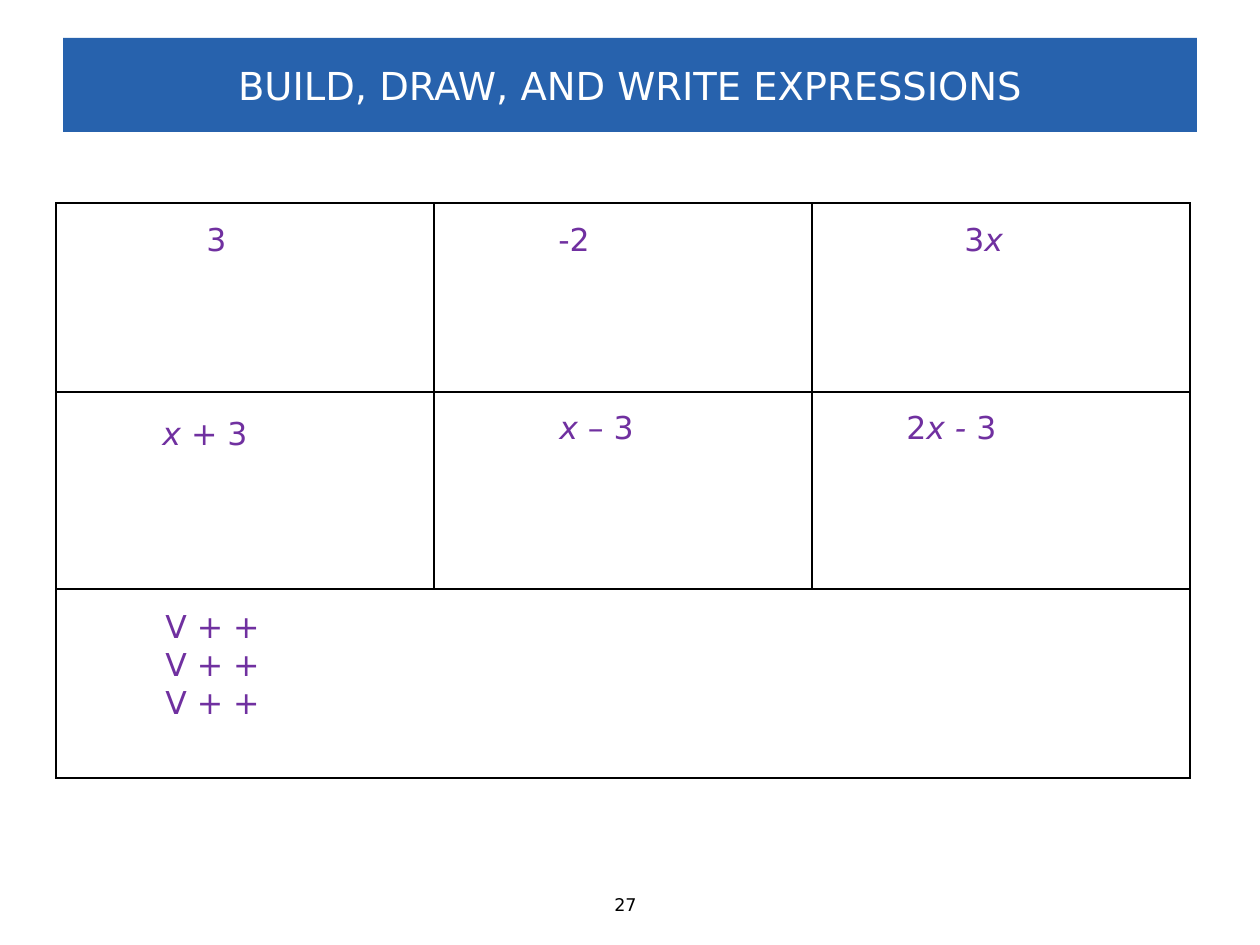
from dataclasses import dataclass

from lxml import etree
from pptx import Presentation
from pptx.dml import color
from pptx.enum import text
from pptx.oxml import ns
from pptx.util import Emu, Pt

PX = 914400 // 126  # one px in EMU


@dataclass(frozen=True)
class Theme:
    font: str = "DejaVu Sans"
    banner: str = "2762AD"
    on_banner: str = "FFFFFF"
    expression: str = "7030A0"
    ink: str = "000000"
    title_size: int = 22
    expression_size: int = 18
    number_size: int = 10
    border: int = 1


THEME = Theme()

# Left, top, width and indent in px, then lines of (wording, italic) runs
EXPRESSIONS = [
    (67, 214, 189, 127, [[("3", False)]]),
    (446, 214, 291, 100, [[("-2", False)]]),
    (825, 214, 291, 127, [[("3", False), ("x", True)]]),
    (150, 408, 146, 0, [[("x", True), (" + 3", False)]]),
    (447, 402, 329, 100, [[("x", True), (" – 3", False)]]),
    (824, 402, 291, 70, [[("2", False), ("x - ", True), ("3", False)]]),
    (26, 601, 291, 127, [[("V + +", False)]] * 3),
]


def px(*lengths):
    return [Emu(length * PX) for length in lengths]


def add_run(paragraph, wording, size, ink, italic=False):
    run = paragraph.add_run()
    run.text = wording
    formats = {"name": THEME.font, "size": Pt(size), "italic": italic}
    for name, value in formats.items():
        setattr(run.font, name, value)
    run.font.color.rgb = color.RGBColor.from_string(ink)


def set_frame(frame, **formats):
    for name, value in formats.items():
        setattr(frame, name, value)


def add_banner(slide):
    title = slide.shapes.title
    title.left, title.top, title.width, title.height = px(63, 38, 1134, 94)
    title.fill.solid()
    title.fill.fore_color.rgb = color.RGBColor.from_string(THEME.banner)
    set_frame(title.text_frame, word_wrap=True,
              auto_size=text.MSO_AUTO_SIZE.NONE,
              vertical_anchor=text.MSO_ANCHOR.MIDDLE)
    paragraph = title.text_frame.paragraphs[0]
    paragraph.alignment = text.PP_ALIGN.CENTER
    add_run(paragraph, "BUILD, DRAW, AND WRITE EXPRESSIONS",
            THEME.title_size, THEME.on_banner)


def set_borders(cell):
    properties = cell._tc.get_or_add_tcPr()
    for index, side in enumerate(("lnL", "lnR", "lnT", "lnB")):
        line = etree.Element(ns.qn(f"a:{side}"), w=str(Pt(THEME.border)))
        fill = etree.SubElement(line, ns.qn("a:solidFill"))
        etree.SubElement(fill, ns.qn("a:srgbClr"), val=THEME.ink)
        properties.insert(index, line)


def add_grid(slide, left, top, widths, heights):
    table = slide.shapes.add_table(
        len(heights), len(widths),
        *px(left, top, sum(widths), sum(heights))).table
    table.first_row = table.horz_banding = False
    for column, width in zip(table.columns, px(*widths)):
        column.width = width
    for row, height in zip(table.rows, px(*heights)):
        row.height = height
    for cell in table.iter_cells():
        cell.fill.background()
        set_borders(cell)
    # The last row is one wide cell
    last = len(heights) - 1
    table.cell(last, 0).merge(table.cell(last, len(widths) - 1))


def add_text(slide, left, top, width, height, lines, size, ink,
             indent=0, wrap=True):
    box = slide.shapes.add_textbox(*px(left, top, width, height))
    frame = box.text_frame
    set_frame(frame, word_wrap=wrap,
              auto_size=text.MSO_AUTO_SIZE.SHAPE_TO_FIT_TEXT)
    for index, runs in enumerate(lines):
        paragraph = frame.add_paragraph() if index else frame.paragraphs[0]
        paragraph._p.get_or_add_pPr().set("marL", str(indent * PX))
        for wording, italic in runs:
            add_run(paragraph, wording, size, ink, italic)


def main():
    presentation = Presentation()
    presentation.slide_width, presentation.slide_height = px(1260, 945)
    slide = presentation.slides.add_slide(presentation.slide_layouts[5])

    # Title and work grid
    add_banner(slide)
    add_grid(slide, 56, 203, [378] * 3, [189, 197, 189])

    # Expressions, one per cell
    for left, top, width, indent, lines in EXPRESSIONS:
        height = 12 + 38 * len(lines)
        add_text(slide, left, top, width, height, lines,
                 THEME.expression_size, THEME.expression, indent)

    # Page number
    add_text(slide, 602, 888, 55, 34, [[("27", False)]],
             THEME.number_size, THEME.ink, wrap=False)

    presentation.save("out.pptx")


if __name__ == "__main__":
    main()
